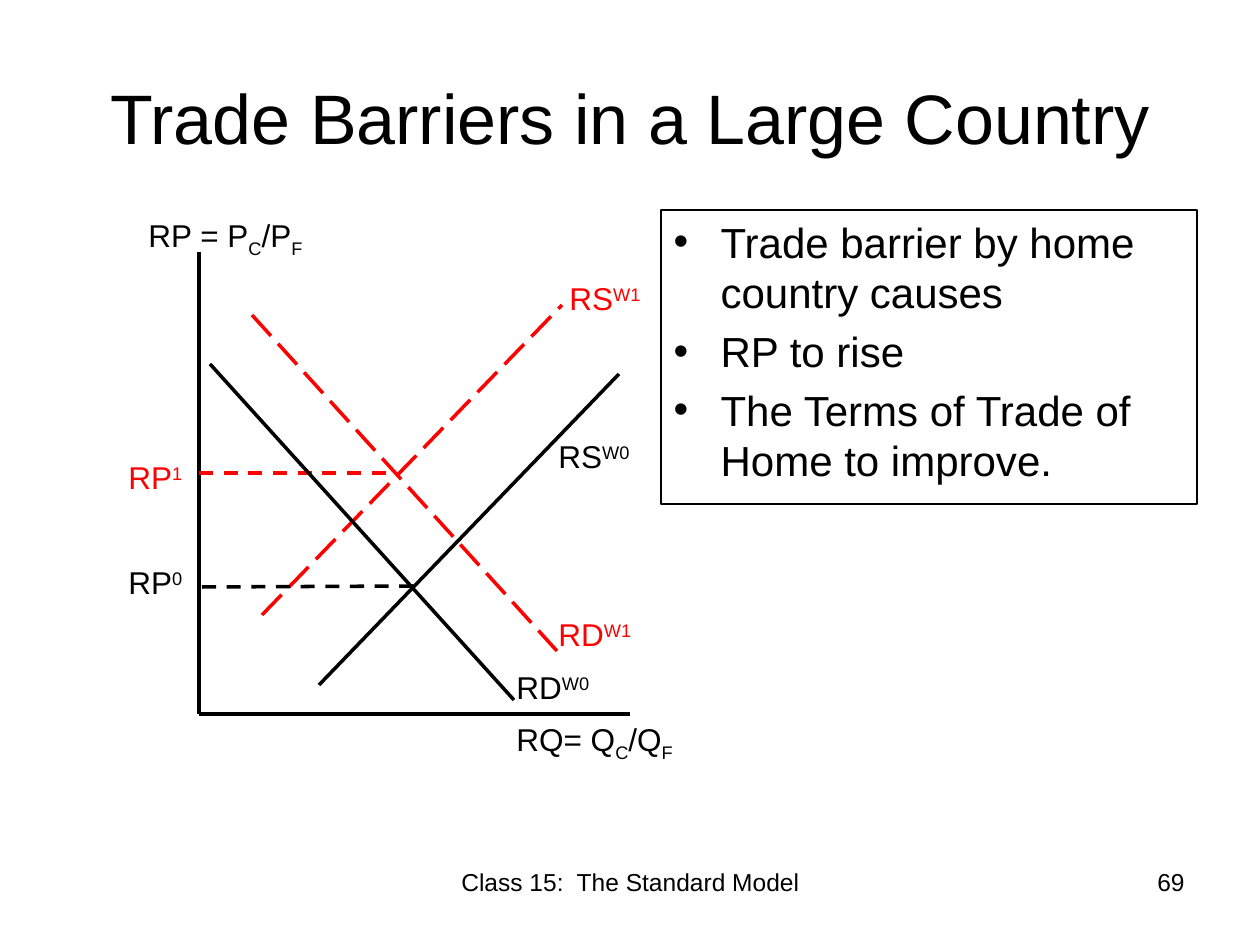
from dataclasses import dataclass

from lxml import etree
from pptx import Presentation
from pptx import util as u
from pptx.dml.color import RGBColor
from pptx.enum import dml, shapes, text
from pptx.oxml.ns import qn

SCALE = 914400 / 126  # EMU per px


@dataclass(frozen=True)
class Theme:
    font: str = "Arial"
    ink: RGBColor = RGBColor(0, 0, 0)
    shift: RGBColor = RGBColor(255, 0, 0)
    title: int = 40
    body: int = 24
    label: int = 18
    footer: int = 14
    line: float = 2
    border: float = 0.75


T = Theme()
SUB, SUP = -25000, 30000
DASH, LONG_DASH = dml.MSO_LINE.DASH, dml.MSO_LINE.LONG_DASH


@dataclass(frozen=True)
class Line:
    x1: int
    y1: int
    x2: int
    y2: int
    color: RGBColor = T.ink
    dash: dml.MSO_LINE | None = None


@dataclass(frozen=True)
class Label:
    x: int
    y: int
    w: int
    runs: tuple[tuple[str, int], ...]  # wording and baseline offset
    color: RGBColor = T.ink


def px(n: int) -> u.Emu:
    return u.Emu(round(n * SCALE))


def place(sp, x: int, y: int, w: int, h: int) -> None:
    sp.left, sp.top, sp.width, sp.height = px(x), px(y), px(w), px(h)


def add_run(p, wording: str, size: int, color: RGBColor = T.ink, baseline: int = 0) -> None:
    r = p.add_run()
    r.text = wording
    r.font.name, r.font.size = T.font, u.Pt(size)
    r.font.color.rgb = color
    if baseline:
        r.font._element.set("baseline", str(baseline))


def add_line(s, line: Line) -> None:
    c = s.shapes.add_connector(shapes.MSO_CONNECTOR.STRAIGHT,
                               px(line.x1), px(line.y1), px(line.x2), px(line.y2))
    c.line.color.rgb, c.line.width = line.color, u.Pt(T.line)
    if line.dash is not None:
        c.line.dash_style = line.dash
    etree.SubElement(c._element.spPr, qn("a:effectLst"))


def add_label(s, label: Label) -> None:
    sp = s.shapes.add_textbox(px(label.x), px(label.y), px(label.w), px(50))
    sp.text_frame.word_wrap = False
    for wording, baseline in label.runs:
        add_run(sp.text_frame.paragraphs[0], wording, T.label, label.color, baseline)


def add_footer(s, x: int, w: int, wording: str, align: text.PP_ALIGN) -> None:
    sp = s.shapes.add_textbox(px(x), px(861), px(w), px(66))
    sp.text_frame.word_wrap = True
    p = sp.text_frame.paragraphs[0]
    p.alignment = align
    add_run(p, wording, T.footer)


LINES = [
    # Axes
    Line(199, 714, 630, 714),
    Line(199, 714, 199, 252),
    # Shifted supply and demand
    Line(262, 615, 562, 305, T.shift, LONG_DASH),
    Line(252, 315, 557, 651, T.shift, LONG_DASH),
    Line(199, 473, 388, 473, T.shift, DASH),
    # Initial supply and demand
    Line(319, 685, 619, 374),
    Line(210, 364, 514, 700),
    Line(202, 587, 413, 586, T.ink, DASH),
]

LABELS = [
    Label(136, 210, 190, (("RP = P", 0), ("C", SUB), ("/P", 0), ("F", SUB))),
    Label(504, 714, 189, (("RQ= Q", 0), ("C", SUB), ("/Q", 0), ("F", SUB))),
    Label(546, 431, 102, (("RS", 0), ("W0", SUP))),
    Label(504, 662, 103, (("RD", 0), ("W0", SUP))),
    Label(116, 557, 84, (("RP", 0), ("0", SUP))),
    Label(116, 452, 84, (("RP", 0), ("1", SUP)), T.shift),
    Label(546, 609, 103, (("RD", 0), ("W1", SUP)), T.shift),
    Label(557, 273, 102, (("RS", 0), ("W1", SUP)), T.shift),
]

EFFECTS = [
    "Trade barrier by home country causes",
    "RP to rise",
    "The Terms of Trade of Home to improve.",
]


def main() -> None:
    prs = Presentation()
    prs.slide_width, prs.slide_height = px(1260), px(945)
    s = prs.slides.add_slide(prs.slide_layouts[1])

    # Title
    title = s.shapes.title
    place(title, 63, 38, 1134, 158)
    tf = title.text_frame
    tf.vertical_anchor = text.MSO_ANCHOR.MIDDLE
    tf.paragraphs[0].alignment = text.PP_ALIGN.CENTER
    add_run(tf.paragraphs[0], "Trade Barriers in a Large Country", T.title)

    # Effects of the barrier
    body = s.placeholders[1]
    place(body, 661, 210, 536, 294)
    body.line.color.rgb, body.line.width = T.ink, u.Pt(T.border)
    tf = body.text_frame
    tf.auto_size = text.MSO_AUTO_SIZE.NONE
    for i, effect in enumerate(EFFECTS):
        p = tf.add_paragraph() if i else tf.paragraphs[0]
        pPr = p._p.get_or_add_pPr()
        pPr.set("marL", str(px(47)))
        pPr.set("indent", str(px(-47)))
        etree.SubElement(pPr, qn("a:buChar")).set("char", "•")
        add_run(p, effect, T.body)

    # Relative supply and demand diagram
    for line in LINES:
        add_line(s, line)
    for label in LABELS:
        add_label(s, label)

    # Footer
    add_footer(s, 431, 399, "Class 15:  The Standard Model", text.PP_ALIGN.CENTER)
    add_footer(s, 903, 294, "69", text.PP_ALIGN.RIGHT)

    prs.save("out.pptx")


if __name__ == "__main__":
    main()
